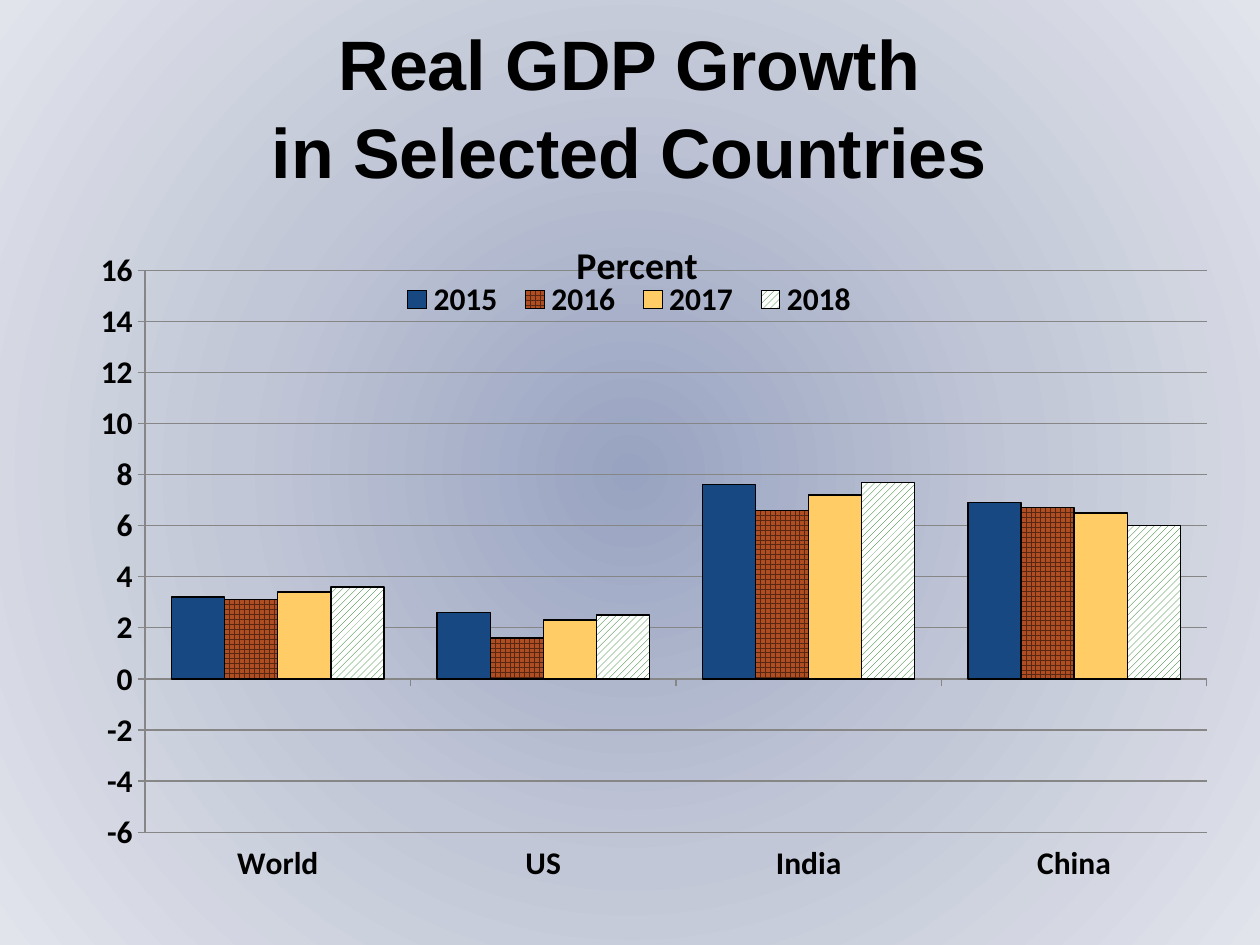
from pptx import Presentation
from pptx.chart.data import CategoryChartData
from pptx.dml.color import RGBColor
from pptx.enum.chart import XL_CHART_TYPE, XL_LEGEND_POSITION, XL_TICK_LABEL_POSITION, XL_TICK_MARK
from pptx.enum.dml import MSO_PATTERN
from pptx.enum.text import MSO_ANCHOR, MSO_AUTO_SIZE, PP_ALIGN
from pptx.oxml import parse_xml
from pptx.oxml.ns import nsdecls, qn
from pptx.util import Inches, Pt

REGIONS = ["World", "US", "India", "China"]
GROWTH = [
    ("2015", [3.2, 2.6, 7.6, 6.9], "174882"),
    ("2016", [3.1, 1.6, 6.6, 6.7], (MSO_PATTERN.LARGE_GRID, "572711", "AE4E22")),
    ("2017", [3.4, 2.3, 7.2, 6.5], "FFCC66"),
    ("2018", [3.6, 2.5, 7.7, 6.0], (MSO_PATTERN.WIDE_UPWARD_DIAGONAL, "006600", "FFFFFF")),
]
STOPS = [(0, "98A3C1"), (50, "C2C7D7"), (100, "E1E4EB")]


def color(text):
    return RGBColor.from_string(text)


def place(part, spot, **rates):
    for old in part.findall(qn("c:layout")):
        part.remove(old)
    modes = "".join(f'<c:{key}Mode val="edge"/>' for key in rates if key in "xy")
    sizes = "".join(f'<c:{key} val="{rate}"/>' for key, rate in rates.items())
    inner = '<c:layoutTarget val="inner"/>' if spot == 0 else ""
    part.insert(spot, parse_xml(
        f'<c:layout {nsdecls("c")}><c:manualLayout>{inner}{modes}{sizes}'
        "</c:manualLayout></c:layout>"))


class Deck:
    ink = "000000"
    grid = "868686"
    head = "Arial"
    body = "Calibri"

    def __init__(self):
        self.show = Presentation()
        self.show.slide_width, self.show.slide_height = Inches(10), Inches(7.5)
        self.slide = self.show.slides.add_slide(self.show.slide_layouts[5])

    def font(self, font, name, size):
        font.name, font.size, font.bold = name, Pt(size), True
        font.color.rgb = color(self.ink)

    def line(self, line, tint):
        line.color.rgb = color(tint)
        line.width = Pt(0.75)

    def ground(self, stops):
        marks = "".join(
            f'<a:gs pos="{pos * 1000}"><a:srgbClr val="{tint}"/></a:gs>' for pos, tint in stops)
        self.slide.element.cSld.insert(0, parse_xml(
            f'<p:bg {nsdecls("p", "a")}><p:bgPr><a:gradFill rotWithShape="1">'
            f'<a:gsLst>{marks}</a:gsLst><a:path path="circle">'
            '<a:fillToRect l="50000" t="50000" r="50000" b="50000"/></a:path>'
            "</a:gradFill><a:effectLst/></p:bgPr></p:bg>"))

    def title(self, text, left, top, width, height):
        shape = self.slide.shapes.title
        shape.left, shape.top = Inches(left), Inches(top)
        shape.width, shape.height = Inches(width), Inches(height)
        frame = shape.text_frame
        frame.text = text
        frame.word_wrap = True
        frame.auto_size = MSO_AUTO_SIZE.NONE
        frame.vertical_anchor = MSO_ANCHOR.MIDDLE
        for para in frame.paragraphs:
            para.alignment = PP_ALIGN.CENTER
            para.line_spacing = 1.05
            for run in para.runs:
                self.font(run.font, self.head, 40)

    def paint(self, series, look):
        fill = series.format.fill
        if isinstance(look, tuple):
            fill.patterned()
            fill.pattern = look[0]
            fill.fore_color.rgb, fill.back_color.rgb = map(color, look[1:])
        else:
            fill.solid()
            fill.fore_color.rgb = color(look)
        series.invert_if_negative = False
        self.line(series.format.line, self.ink)

    def chart(self, name, groups, rows, left, top, width, height):
        data = CategoryChartData()
        data.categories = groups
        for label, values, _ in rows:
            data.add_series(label, values)
        chart = self.slide.shapes.add_chart(
            XL_CHART_TYPE.COLUMN_CLUSTERED, Inches(left), Inches(top),
            Inches(width), Inches(height), data).chart
        self.font(chart.font, self.body, 18)

        plot = chart.plots[0]
        plot.gap_width, plot.overlap, plot.vary_by_categories = 100, 0, False
        for series, row in zip(plot.series, rows):
            self.paint(series, row[2])

        base, scale = chart.category_axis, chart.value_axis
        for axis in (base, scale):
            axis.major_tick_mark = XL_TICK_MARK.OUTSIDE
            axis.minor_tick_mark = XL_TICK_MARK.NONE
            self.line(axis.format.line, self.grid)
        base.tick_label_position = XL_TICK_LABEL_POSITION.LOW
        scale.minimum_scale, scale.maximum_scale, scale.major_unit = -6, 16, 2
        scale.has_major_gridlines = True
        self.line(scale.major_gridlines.format.line, self.grid)

        chart.has_title = True
        title = chart.chart_title
        title.text_frame.text = name
        self.font(title.text_frame.paragraphs[0].runs[0].font, self.body, 21.6)
        title.include_in_layout = False

        chart.has_legend = True
        legend = chart.legend
        legend.position = XL_LEGEND_POSITION.TOP
        legend.include_in_layout = False
        self.font(legend.font, self.body, 18)

        place(chart.element.chart.plotArea, 0, x=0.095, y=0.114, w=0.888, h=0.788)
        place(title.element if hasattr(title, "element") else chart.element.chart.find(qn("c:title")),
              1, x=0.45, y=0.06)
        place(chart.element.chart.find(qn("c:legend")), 1, x=0.3, y=0.12, w=0.4, h=0.07)


def main():
    deck = Deck()
    deck.ground(STOPS)
    deck.title("Real GDP Growth\nin Selected Countries", 0.25, 0.33, 9.49, 1)
    deck.chart("Percent", REGIONS, GROWTH, 0.25, 1.5, 9.49, 5.66)
    deck.show.save("out.pptx")


if __name__ == "__main__":
    main()
